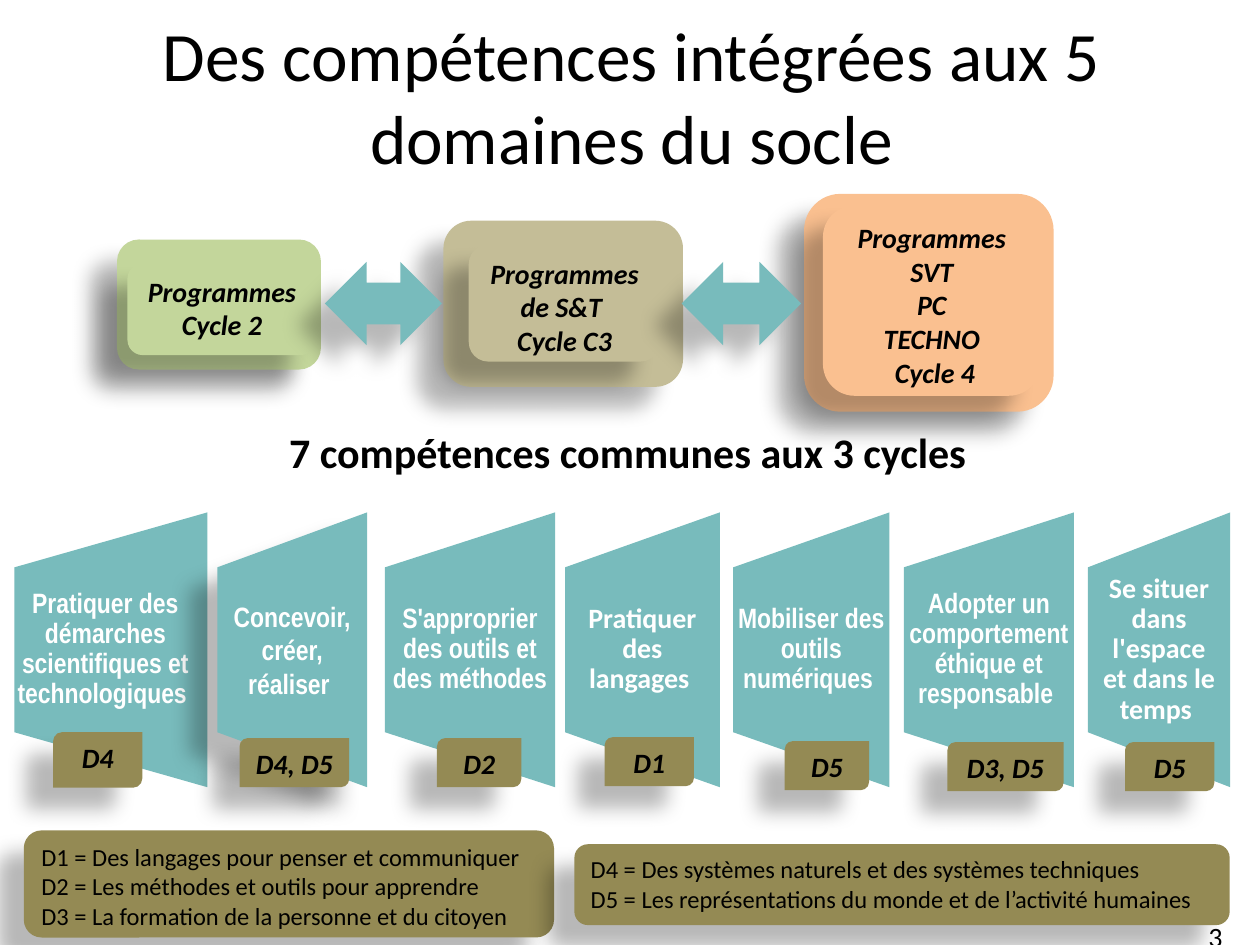
from lxml.etree import SubElement
from pptx import Presentation
from pptx.dml.color import RGBColor
from pptx.enum.shapes import MSO_SHAPE as Shape
from pptx.enum.text import MSO_ANCHOR as Anchor, MSO_AUTO_SIZE as AutoSize, PP_ALIGN as Align
from pptx.oxml.ns import qn
from pptx.util import Cm, Pt

BLACK = RGBColor(0x00, 0x00, 0x00)
WHITE = RGBColor(0xFF, 0xFF, 0xFF)
TEAL = RGBColor(0x78, 0xBB, 0xBC)
OLIVE = RGBColor(0x94, 0x8A, 0x54)
GREEN = RGBColor(0xC3, 0xD6, 0x9B)
SAND = RGBColor(0xC4, 0xBD, 0x97)
ORANGE = RGBColor(0xFA, 0xC0, 0x90)

PANEL_TOP, PANEL_HEIGHT = 10.33, 5.54
LABEL_TOP, LABEL_HEIGHT = 11.43, 3.33

PROGRAMMES = [
    (SAND, (8.94, 4.45, 4.83, 3.35), (9.45, 4.93, 3.86, 2.36),
     ["Programmes de S&T ", "Cycle C3"]),
    (ORANGE, (16.21, 3.91, 5.03, 4.39), (16.59, 4.14, 4.39, 3.84),
     ["Programmes", "SVT", "PC", "TECHNO", " Cycle 4"]),
    (GREEN, (2.36, 4.83, 4.11, 2.62), (2.57, 5.31, 3.81, 1.85),
     ["Programmes Cycle 2"]),
]

ARROWS = [(6.55, 5.28, 2.36, 1.68), (13.74, 5.28, 2.41, 1.68)]

SKILLS = [
    ("Pratiquer des démarches scientifiques et technologiques ", "Arial Narrow",
     (0.29, 3.89), (0.08, 4.09), 0.1, "D4", (1.07, 14.76, 1.8, 1.12)),
    ("Concevoir, créer, réaliser ", "Arial Narrow",
     (4.38, 3.02), (4.38, 3.02), 0.25, "D4, D5", (4.83, 14.88, 2.21, 0.99)),
    ("S'approprier des outils et des méthodes ", "Arial Narrow",
     (7.76, 3.43), (7.76, 3.43), 0.1, "D2", (8.81, 14.88, 1.7, 0.99)),
    ("Pratiquer des langages ", "Calibri",
     (11.39, 3.12), (11.39, 3.12), 0.28, "D1", (12.19, 14.86, 1.8, 0.99)),
    ("Mobiliser des outils numériques ", "Arial Narrow",
     (14.78, 3.15), (14.78, 3.15), 0, "D5", (15.82, 14.94, 1.7, 0.99)),
    ("Adopter un comportement éthique et responsable ", "Arial Narrow",
     (18.22, 3.43), (18.22, 3.43), 0, "D3, D5", (19.1, 14.96, 2.34, 0.99)),
    ("Se situer dans l'espace et dans le temps ", "Calibri",
     (21.93, 2.87), (21.93, 2.87), 0.28, "D5", (22.68, 14.96, 1.8, 0.99)),
]

LEGENDS = [
    ((0.48, 16.74, 10.69, 2.16),
     ["D1 = Des langages pour penser et communiquer",
      "D2 = Les méthodes et outils pour apprendre",
      "D3 = La formation de la personne et du citoyen"]),
    ((11.58, 17.02, 13.21, 1.63),
     ["D4 = Des systèmes naturels et des systèmes techniques",
      "D5 = Les représentations du monde et de l’activité humaines"]),
]


def lengths(box):
    return [Cm(v) for v in box]


def write(tf, lines, size, color=BLACK, font="Calibri", bold=False, italic=False,
          align=Align.CENTER, spacing=None):
    tf.word_wrap = True
    for i, line in enumerate(lines):
        p = tf.add_paragraph() if i else tf.paragraphs[0]
        p.alignment = align
        p.line_spacing = spacing
        r = p.add_run()
        r.text = line
        r.font.size = Pt(size)
        r.font.name = font
        r.font.bold = bold
        r.font.italic = italic
        r.font.color.rgb = color


def add_shadow(s):
    effects = s._element.spPr.find(qn("a:effectLst"))
    shadow = SubElement(effects, qn("a:outerShdw"), blurRad=str(Pt(11.8)),
                        dist=str(Pt(19.7)), dir=str(141 * 60000), rotWithShape="0")
    color = SubElement(shadow, qn("a:srgbClr"), val=str(BLACK))
    SubElement(color, qn("a:alpha"), val="28000")


def add_box(shapes, kind, box, fill, shadow=True):
    s = shapes.add_shape(kind, *lengths(box))
    s.fill.solid()
    s.fill.fore_color.rgb = fill
    s.line.fill.background()
    s.shadow.inherit = False
    if shadow:
        add_shadow(s)
    s.text_frame.vertical_anchor = Anchor.TOP
    return s


def add_label(shapes, box, lines, size, **style):
    tf = shapes.add_textbox(*lengths(box)).text_frame
    write(tf, lines, size, **style)
    return tf


def add_programme(shapes, fill, outer, inner, lines):
    group = shapes.add_group_shape().shapes
    add_box(group, Shape.ROUNDED_RECTANGLE, outer, fill)
    s = add_box(group, Shape.ROUNDED_RECTANGLE, inner, fill)
    write(s.text_frame, lines, 16, bold=True, italic=True)


def add_skill(shapes, text, font, panel, label, inset, domain, tag):
    group = shapes.add_group_shape().shapes
    left, width = panel
    raised = domain == "D4, D5"
    box = (left + (width - PANEL_HEIGHT) / 2, PANEL_TOP + (PANEL_HEIGHT - width) / 2,
           PANEL_HEIGHT, width)
    s = add_box(group, Shape.FLOWCHART_MANUAL_OPERATION, box, TEAL, shadow=raised)
    s.rotation = 90

    left, width = label
    tf = add_label(group, (left, LABEL_TOP, width, LABEL_HEIGHT), [text], 16,
                   color=WHITE, font=font, bold=True, spacing=1.0 if raised else 0.9)
    tf.vertical_anchor = Anchor.MIDDLE
    tf.margin_left = tf.margin_right = Cm(inset)
    tf.margin_top = tf.margin_bottom = 0

    s = add_box(group, Shape.ROUND_2_DIAG_RECTANGLE, tag, OLIVE)
    write(s.text_frame, [domain], 16, bold=True, italic=True)


def add_title(slide, text):
    s = slide.shapes.title
    s.left, s.top, s.width, s.height = lengths((1.3, 0.33, 22.86, 3.18))
    s.text_frame.auto_size = AutoSize.NONE
    s.text_frame.vertical_anchor = Anchor.MIDDLE
    write(s.text_frame, [text], 39.6)


def main():
    prs = Presentation()
    prs.slide_width, prs.slide_height = Cm(25.4), Cm(19.05)
    slide = prs.slides.add_slide(prs.slide_layouts[5])
    shapes = slide.shapes

    add_title(slide, "Des compétences intégrées aux 5 domaines du socle")
    for programme in PROGRAMMES:
        add_programme(shapes, *programme)
    for box in ARROWS:
        add_box(shapes, Shape.LEFT_RIGHT_ARROW, box, TEAL)
    for skill in SKILLS:
        add_skill(shapes, *skill)
    for box, lines in LEGENDS:
        s = add_box(shapes, Shape.ROUNDED_RECTANGLE, box, OLIVE)
        write(s.text_frame, lines, 14, align=Align.LEFT)
    add_label(shapes, (0.08, 8.48, 25.15, 1.32),
              ["7 compétences communes aux 3 cycles"], 24, bold=True)
    add_label(shapes, (23.09, 18.42, 2.82, 1.27), ["3"], 16)

    prs.save("out.pptx")


if __name__ == "__main__":
    main()
